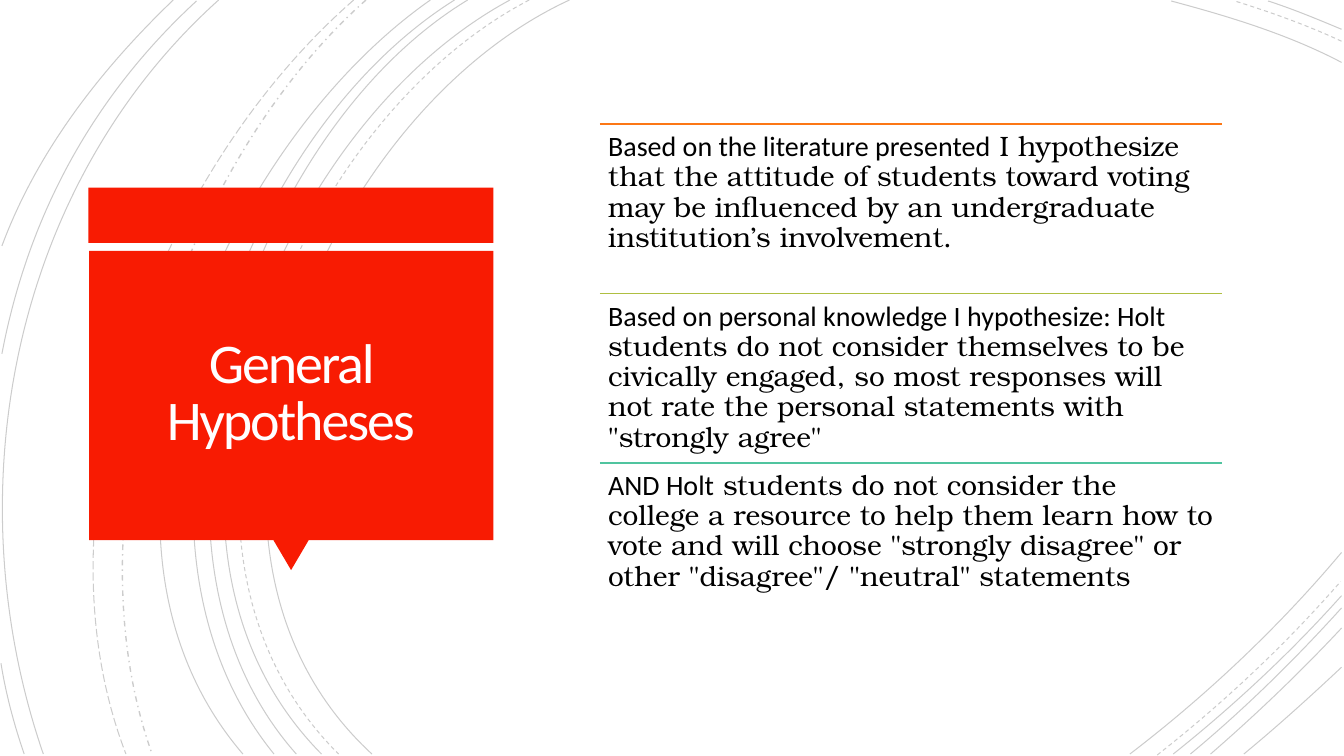
from dataclasses import dataclass

from lxml.etree import SubElement
from pptx import Presentation
from pptx.dml.color import RGBColor
from pptx.enum.dml import MSO_LINE
from pptx.enum.shapes import MSO_CONNECTOR, MSO_SHAPE
from pptx.enum.text import MSO_ANCHOR, MSO_AUTO_SIZE, PP_ALIGN
from pptx.oxml.ns import qn
from pptx.util import Pt


@dataclass(frozen=True)
class Theme:
    red: RGBColor = RGBColor(0xF8, 0x1B, 0x02)
    white: RGBColor = RGBColor(0xFF, 0xFE, 0xFF)
    black: RGBColor = RGBColor(0, 0, 0)
    orange: RGBColor = RGBColor(0xFC, 0x77, 0x15)
    olive: RGBColor = RGBColor(0xAF, 0xBF, 0x41)
    teal: RGBColor = RGBColor(0x50, 0xC4, 0x9F)
    sans: str = "Calibri"
    serif: str = "TeX Gyre Bonum"
    head: int = 40
    body: int = 20


@dataclass(frozen=True)
class Arc:
    """A cubic curve: start, two control points and end."""
    start: tuple[float, float]
    bend: tuple[float, float]
    pull: tuple[float, float]
    end: tuple[float, float]
    dash: MSO_LINE = MSO_LINE.SOLID
    width: float = 0.75


@dataclass(frozen=True)
class Block:
    shape: MSO_SHAPE
    left: float
    top: float
    width: float
    height: float
    turn: int = 0


@dataclass(frozen=True)
class Point:
    color: RGBColor
    lead: str
    rest: str


THEME = Theme()
LEFT, TOP, WIDTH, ROW = 428.4, 88.6, 444.2, 121

ARCS = [
    Arc((406.8, 0), (226.8, 82.8), (103, 388.8), (265.7, 538.6)),
    Arc((958.3, 44.6), (920.2, 24.5), (877, 11.5), (836.6, 0.7)),
    Arc((807.1, 538.6), (861.8, 496.8), (913.7, 447.8), (958.3, 394.6)),
    Arc((378, 0), (205.2, 90), (88.6, 386.6), (241.9, 538.6), MSO_LINE.DASH),
    Arc((958.3, 29.5), (933.8, 18), (907.2, 8.6), (882, 0.7), MSO_LINE.DASH),
    Arc((826.6, 539.3), (873.4, 502.6), (918, 460.8), (957.6, 415.4), MSO_LINE.DASH),
    Arc((364.3, 0), (194.4, 91.4), (79.2, 386.6), (229.7, 538.6)),
    Arc((958.3, 20.9), (941, 13.7), (923.8, 6.5), (905.8, 0.7)),
    Arc((838.1, 538.6), (880.6, 504.7), (921.6, 466.6), (958.3, 425.5)),
    Arc((334.1, 0), (175.7, 95.8), (79.2, 389.5), (211.7, 538.6)),
    Arc((850.3, 538.6), (888.5, 506.9), (924.5, 471.6), (958.3, 434.2)),
    Arc((324.7, 0), (166.3, 99.4), (69.8, 383.8), (195.8, 538.6)),
    Arc((864.7, 538.6), (897.1, 510.5), (928.8, 480.2), (958.3, 448.6)),
    Arc((307.4, 0), (156.2, 105.8), (38.2, 380.9), (173.5, 538.6)),
    Arc((888.5, 538.6), (912.2, 519.1), (935.3, 498.2), (958.3, 476.6)),
    Arc((261.4, 0), (126.7, 119.5), (46.8, 366.5), (108.7, 538.6), MSO_LINE.DASH_DOT, 1),
    Arc((252.7, 0), (113, 121.7), (20.9, 359.3), (90, 538.6), MSO_LINE.LONG_DASH),
    Arc((156.2, 0), (7.9, 133.2), (-33.1, 352.8), (31, 538.6)),
    Arc((140.4, 0.7), (66.2, 69.1), (20.2, 154.1), (1.4, 252.7)),
    Arc((0.7, 473.8), (4.3, 496.1), (10.1, 517.7), (17.3, 538.6)),
    Arc((123.8, 0), (72, 49.7), (26.6, 108), (1.4, 175.7)),
]

BLOCKS = [
    Block(MSO_SHAPE.RECTANGLE, 63.2, 134, 289.2, 39.6),
    Block(MSO_SHAPE.ISOSCELES_TRIANGLE, 195.3, 385.8, 25.2, 21.4, 180),
    Block(MSO_SHAPE.RECTANGLE, 63.7, 179.3, 288.7, 206.6),
]

POINTS = [
    Point(THEME.orange, "Based on the literature presented",
          " I hypothesize that the attitude of students toward voting may be "
          "influenced by an undergraduate institution’s involvement."),
    Point(THEME.olive, "Based on personal knowledge I hypothesize: Holt",
          " students do not consider themselves to be civically engaged, so most "
          'responses will not rate the personal statements with "strongly agree"'),
    Point(THEME.teal, "AND Holt",
          " students do not consider the college a resource to help them learn how "
          'to vote and will choose "strongly disagree" or other "disagree"/ '
          '"neutral" statements'),
]


def bend_path(curve) -> None:
    """Turn the three straight segments into one cubic curve."""
    track = curve.element.spPr.find(".//" + qn("a:path"))
    cubic = SubElement(track, qn("a:cubicBezTo"))
    for side in track.findall(qn("a:lnTo")):
        cubic.append(side[0])
        track.remove(side)


def draw_arc(slide, arc: Arc) -> None:
    first, *others = [(Pt(x), Pt(y)) for x, y in (arc.start, arc.bend, arc.pull, arc.end)]
    pen = slide.shapes.build_freeform(*first)
    pen.add_line_segments(others, close=False)
    curve = pen.convert_to_shape()
    bend_path(curve)
    curve.shadow.inherit = False
    curve.fill.background()
    curve.line.width = Pt(arc.width)
    curve.line.color.rgb = THEME.black
    curve.line.dash_style = arc.dash
    tint = curve.element.spPr.find(qn("a:ln")).find(".//" + qn("a:srgbClr"))
    SubElement(tint, qn("a:alpha"), val="20000")


def draw_block(slide, block: Block) -> None:
    shape = slide.shapes.add_shape(block.shape, Pt(block.left), Pt(block.top),
                                   Pt(block.width), Pt(block.height))
    shape.rotation = block.turn
    shape.shadow.inherit = False
    shape.fill.solid()
    shape.fill.fore_color.rgb = THEME.red
    shape.line.fill.background()


def set_frame(frame, inset: float, anchor: MSO_ANCHOR) -> None:
    frame.word_wrap = True
    frame.auto_size = MSO_AUTO_SIZE.NONE
    frame.vertical_anchor = anchor
    frame.margin_left = frame.margin_right = Pt(inset)
    frame.margin_top = frame.margin_bottom = Pt(inset)


def set_font(run, name: str, size: int, color: RGBColor) -> None:
    run.font.name = name
    run.font.size = Pt(size)
    run.font.color.rgb = color


def draw_title(slide) -> None:
    title = slide.shapes.title
    title.left, title.top = Pt(69.8), Pt(185)
    title.width, title.height = Pt(275.8), Pt(193.7)
    title.element.getparent().append(title.element)  # bring above the red panel
    frame = title.text_frame
    frame.text = "General Hypotheses"
    set_frame(frame, 18, MSO_ANCHOR.MIDDLE)
    para = frame.paragraphs[0]
    para.alignment = PP_ALIGN.CENTER
    para.line_spacing = 0.85
    run = para.runs[0]
    set_font(run, THEME.sans, THEME.head, THEME.white)
    run.font._element.set("spc", "-150")


def draw_point(slide, point: Point, top: float) -> None:
    rule = slide.shapes.add_connector(MSO_CONNECTOR.STRAIGHT, Pt(LEFT), Pt(top),
                                      Pt(LEFT + WIDTH), Pt(top))
    rule.line.color.rgb = point.color
    rule.line.width = Pt(1.25)
    SubElement(rule.element.spPr, qn("a:effectLst"))
    box = slide.shapes.add_textbox(Pt(LEFT), Pt(top), Pt(WIDTH), Pt(ROW))
    set_frame(box.text_frame, 6, MSO_ANCHOR.TOP)
    para = box.text_frame.paragraphs[0]
    para.line_spacing = 0.9
    para.space_after = Pt(7)
    for text, font in ((point.lead, THEME.sans), (point.rest, THEME.serif)):
        run = para.add_run()
        run.text = text
        set_font(run, font, THEME.body, THEME.black)


def main() -> None:
    deck = Presentation()
    deck.slide_width, deck.slide_height = Pt(960), Pt(540)
    slide = deck.slides.add_slide(deck.slide_layouts.get_by_name("Title Only"))
    for arc in ARCS:
        draw_arc(slide, arc)
    for block in BLOCKS:
        draw_block(slide, block)
    draw_title(slide)
    for row, point in enumerate(POINTS):
        draw_point(slide, point, TOP + row * ROW)
    deck.save("out.pptx")


if __name__ == "__main__":
    main()
